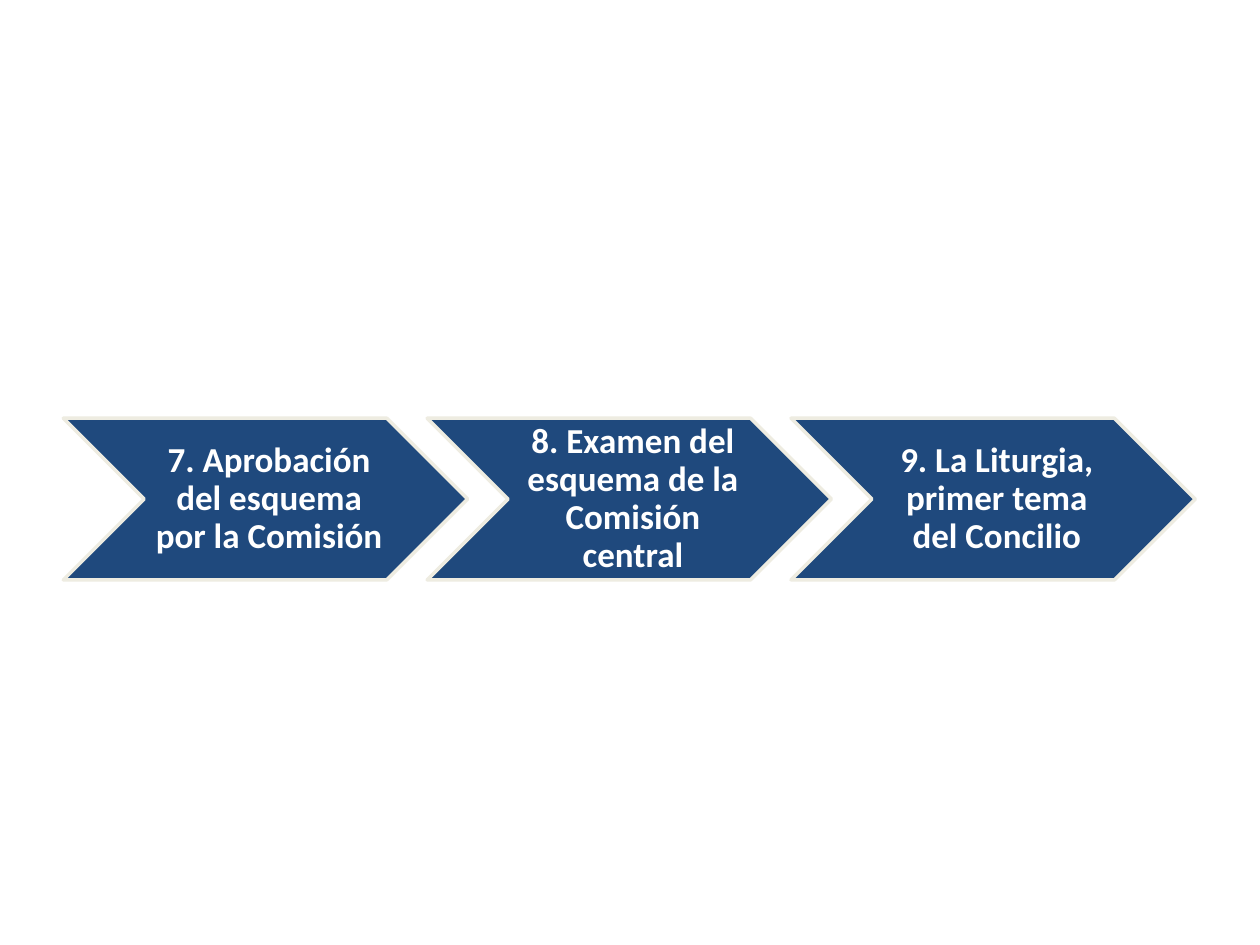
from pptx import Presentation
from pptx.dml.color import RGBColor
from pptx.enum.shapes import MSO_SHAPE
from pptx.enum.text import MSO_ANCHOR, PP_ALIGN
from pptx.util import Pt


def color(hex_value):
    return RGBColor.from_string(hex_value)


presentation = Presentation()
presentation.slide_width = Pt(720)
presentation.slide_height = Pt(540)
slide = presentation.slides.add_slide(presentation.slide_layouts[6])

# Process steps and their even spacing
steps = [
    "7. Aprobación del esquema por la Comisión",
    "8. Examen del esquema de la Comisión central",
    "9. La Liturgia, primer tema del Concilio",
]
first_left, top, width, height = 36.2, 239, 231, 92.4
pitch = width * 0.9

frame_format = {
    "word_wrap": True,
    "vertical_anchor": MSO_ANCHOR.MIDDLE,
    "margin_left": Pt(6.3),
    "margin_top": Pt(2.1),
    "margin_right": Pt(2.1),
    "margin_bottom": Pt(2.1),
}
paragraph_format = {"alignment": PP_ALIGN.CENTER, "line_spacing": 0.9}
font_format = {"name": "Calibri", "size": Pt(20), "bold": True}

# Chevron chain
for position, step in enumerate(steps):
    chevron = slide.shapes.add_shape(
        MSO_SHAPE.CHEVRON,
        Pt(first_left + position * pitch), Pt(top), Pt(width), Pt(height),
    )
    chevron.shadow.inherit = False
    chevron.fill.solid()
    chevron.fill.fore_color.rgb = color("1F497D")
    chevron.line.color.rgb = color("EEECE1")
    chevron.line.width = Pt(2)

    # Step label
    label = chevron.text_frame
    label.text = step
    paragraph = label.paragraphs[0]
    font = paragraph.runs[0].font
    font.color.rgb = color("FFFFFF")
    for target, values in (
        (label, frame_format),
        (paragraph, paragraph_format),
        (font, font_format),
    ):
        for attribute, value in values.items():
            setattr(target, attribute, value)

presentation.save("out.pptx")
